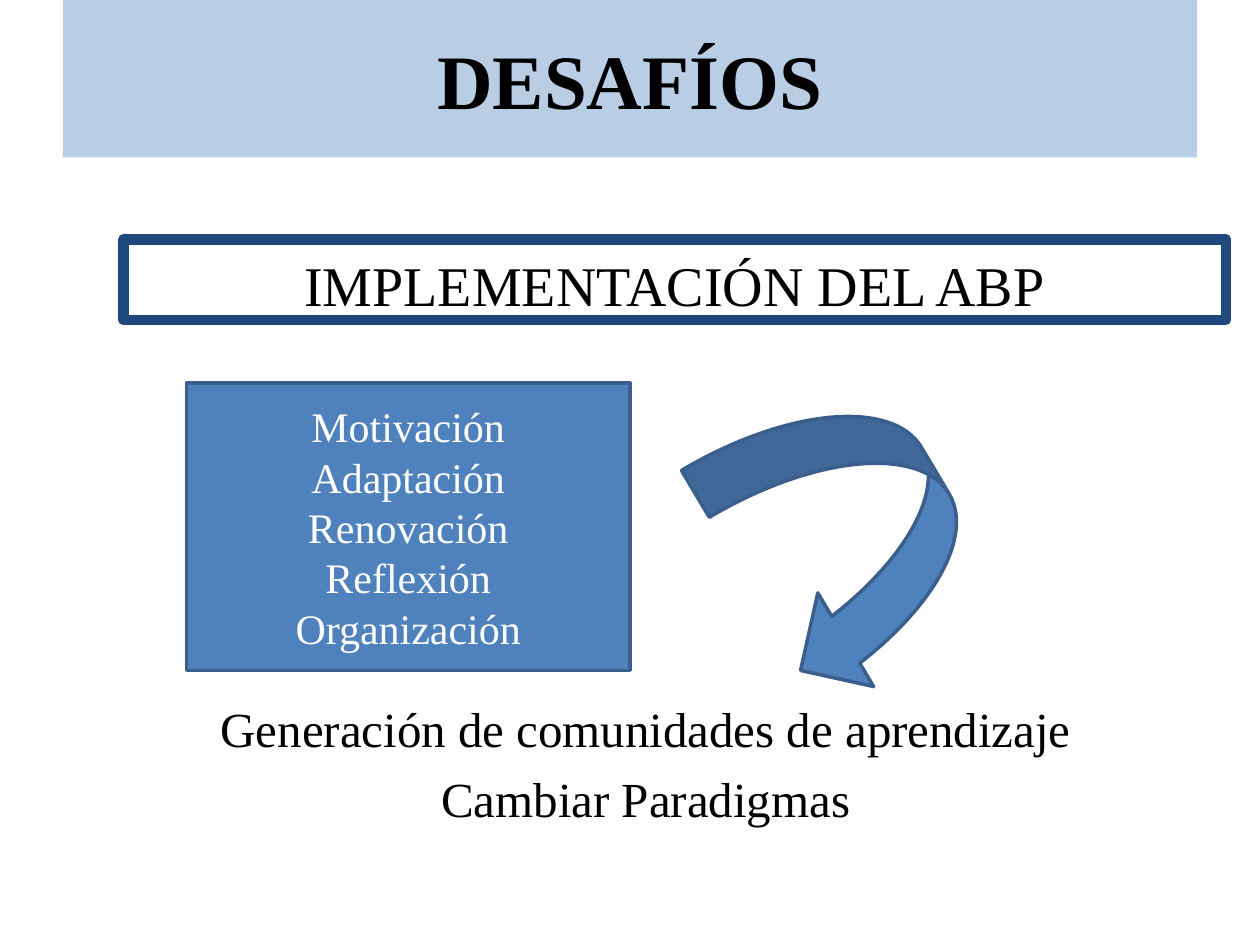
from pptx import Presentation
from pptx.dml.color import RGBColor
from pptx.enum.shapes import MSO_SHAPE as Kind
from pptx.enum.text import MSO_ANCHOR as Anchor, PP_ALIGN as Align
from pptx.util import Inches, Pt

# Content
TITLE = ["DESAFÍOS"]
TOPIC = ["IMPLEMENTACIÓN DEL ABP"]
NEEDS = ["Motivación", "Adaptación", "Renovación", "Reflexión", "Organización"]
GOALS = ["Generación de comunidades de aprendizaje", "Cambiar Paradigmas"]

THEME = {
    "font": "Times New Roman",
    "black": "000000", "white": "FFFFFF",
    "pale": "B9CDE5", "navy": "1F497D", "blue": "4F81BD", "edge": "3A5F8C",
    "title": 44, "topic": 32, "goals": 28, "needs": 24,
}


def color(name):
    return RGBColor.from_string(THEME[name])


def add_form(slide, kind, box, fill=None, line=None, width=2):
    form = slide.shapes.add_shape(kind, *map(Inches, box))
    form.shadow.inherit = False
    if fill:
        form.fill.solid()
        form.fill.fore_color.rgb = color(fill)
    else:
        form.fill.background()
    if line:
        form.line.color.rgb = color(line)
        form.line.width = Pt(width)
    else:
        form.line.fill.background()
    return form


def write(form, lines, size, ink="black", anchor=Anchor.MIDDLE, top=0.05, gap=0):
    frame = form.text_frame
    frame.word_wrap = True
    frame.vertical_anchor = anchor
    frame.margin_top = Inches(top)
    for i, line in enumerate(lines):
        para = frame.paragraphs[0] if i == 0 else frame.add_paragraph()
        para.text = line
        para.alignment = Align.CENTER
        para.space_after = Pt(gap)
        para.font.name = THEME["font"]
        para.font.size = Pt(THEME[size])
        para.font.bold = size == "title"
        para.font.color.rgb = color(ink)


def main():
    deck = Presentation()
    deck.slide_width, deck.slide_height = Inches(10), Inches(7.5)
    slide = deck.slides.add_slide(deck.slide_layouts[6])

    # Title band
    band = add_form(slide, Kind.RECTANGLE, (0.5, 0, 9, 1.25), "pale")
    write(band, TITLE, "title")

    # Goals, set low in the body panel
    body = add_form(slide, Kind.RECTANGLE, (0.75, 2.72, 8.75, 4.41), "white")
    write(body, GOALS, "goals", anchor=Anchor.TOP, top=2.82, gap=6.5)

    # Framed topic
    topic = add_form(slide, Kind.RECTANGLE, (0.98, 1.9, 8.75, 0.64),
                     line="navy", width=6)
    write(topic, TOPIC, "topic", anchor=Anchor.TOP, top=0.09)

    # Needs and the arrow that leads to the goals
    needs = add_form(slide, Kind.RECTANGLE, (1.48, 3.04, 3.52, 2.28),
                     "blue", "edge")
    write(needs, NEEDS, "needs", "white")
    arrow = add_form(slide, Kind.CURVED_LEFT_ARROW, (5.87, 3.13, 1.73, 2.28),
                     "blue", "edge")
    arrow.rotation = 329.2

    deck.save("out.pptx")


if __name__ == "__main__":
    main()
